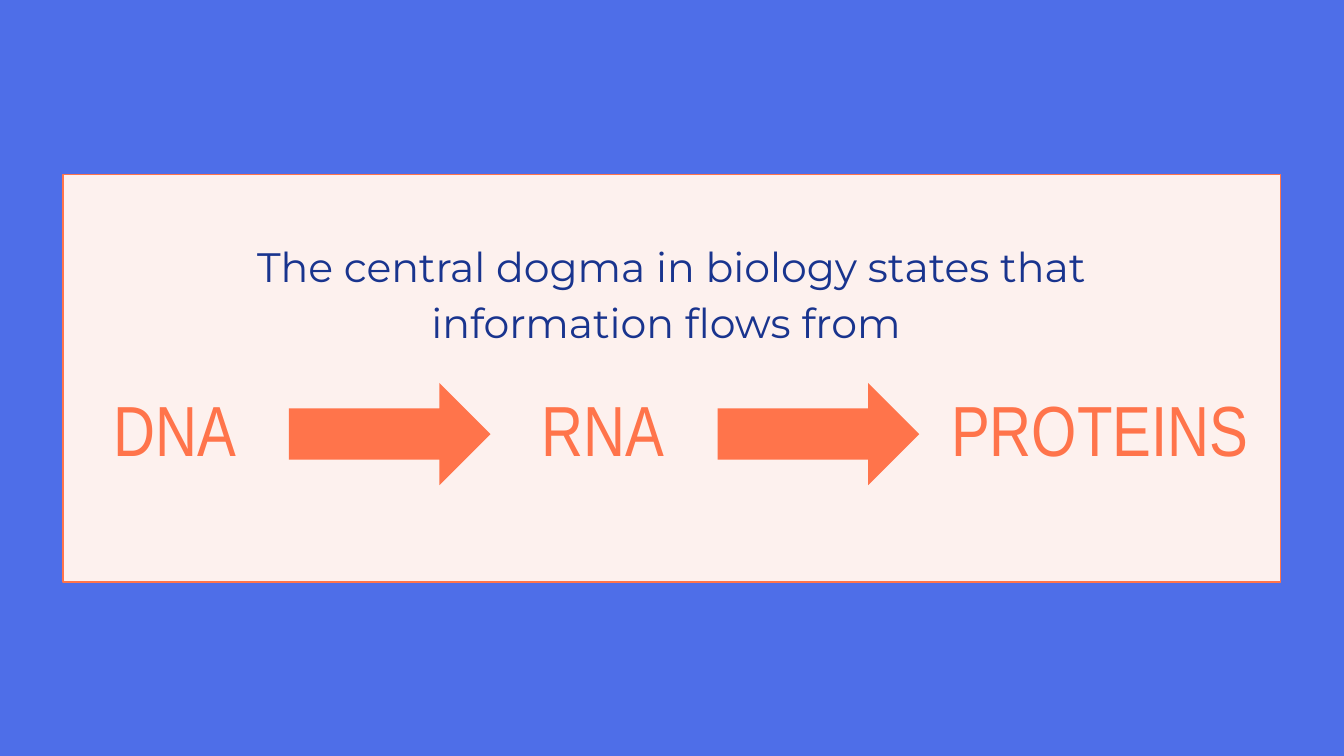
from pptx import Presentation
from pptx.dml.color import RGBColor
from pptx.enum import shapes, text
from pptx.util import Inches, Pt

BLUE = RGBColor(0x4E, 0x6E, 0xE8)
CREAM = RGBColor(0xFD, 0xF1, 0xEE)
ORANGE = RGBColor(0xFF, 0x74, 0x4B)
NAVY = RGBColor(0x19, 0x34, 0x8E)

STEP_TOP, STEP_HEIGHT = 2.77, 0.92
ARROW_TOP, ARROW_WIDTH, ARROW_HEIGHT = 2.85, 1.5, 0.76
STEP_PITCH = 3.19


def place(shape, left, top, width, height):
    shape.left, shape.top = Inches(left), Inches(top)
    shape.width, shape.height = Inches(width), Inches(height)


def write(shape, words, font, size, color, line_spacing=1.0, space_after=0):
    """Fill a text shape with one centred, formatted paragraph."""
    frame = shape.text_frame
    frame.text = words
    frame.word_wrap = True
    frame.auto_size = text.MSO_AUTO_SIZE.NONE
    frame.vertical_anchor = text.MSO_ANCHOR.TOP
    frame.margin_left = frame.margin_right = Inches(0.1)
    frame.margin_top = frame.margin_bottom = Inches(0.1)
    paragraph = frame.paragraphs[0]
    paragraph.alignment = text.PP_ALIGN.CENTER
    paragraph.line_spacing = line_spacing
    paragraph.space_before = Pt(0)
    paragraph.space_after = Pt(space_after)
    for run in paragraph.runs:
        run.font.name = font
        run.font.size = Pt(size)
        run.font.color.rgb = color


prs = Presentation()
prs.slide_width = Inches(10)
prs.slide_height = prs.slide_width * 9 // 16
slide = prs.slides.add_slide(prs.slide_layouts[0])
slide.background.fill.solid()
slide.background.fill.fore_color.rgb = BLUE

# Card, sent behind the placeholders
card = slide.shapes.add_shape(
    shapes.MSO_SHAPE.RECTANGLE, Inches(0.47), Inches(1.3), Inches(9.06), Inches(3.03))
card.shadow.inherit = False
card.fill.solid()
card.fill.fore_color.rgb = CREAM
card.line.color.rgb = ORANGE
card.line.width = Pt(0.75)
slide.shapes.element.insert(2, card.element)

# Statement
statement = slide.placeholders[1]
place(statement, 1.03, 1.64, 7.93, 1.31)
write(statement, "The central dogma in biology states that information flows from ",
      "Montserrat", 22, NAVY, 1.15, 12)

# Flow of information
steps = [("DNA", 0.58, 1.44), ("RNA", 0.58 + STEP_PITCH, 1.44), ("PROTEINS", 6.96, 2.45)]
for index, (molecule, left, width) in enumerate(steps):
    if index == 0:
        step = slide.shapes.title
    else:
        step = slide.shapes.add_textbox(0, 0, 0, 0)
    place(step, left, STEP_TOP, width, STEP_HEIGHT)
    write(step, molecule, "Arial Narrow", 38, ORANGE)

for index in range(len(steps) - 1):
    arrow = slide.shapes.add_shape(
        shapes.MSO_SHAPE.RIGHT_ARROW, Inches(2.15 + index * STEP_PITCH),
        Inches(ARROW_TOP), Inches(ARROW_WIDTH), Inches(ARROW_HEIGHT))
    arrow.shadow.inherit = False
    arrow.fill.solid()
    arrow.fill.fore_color.rgb = ORANGE
    arrow.line.fill.background()

prs.save("out.pptx")
